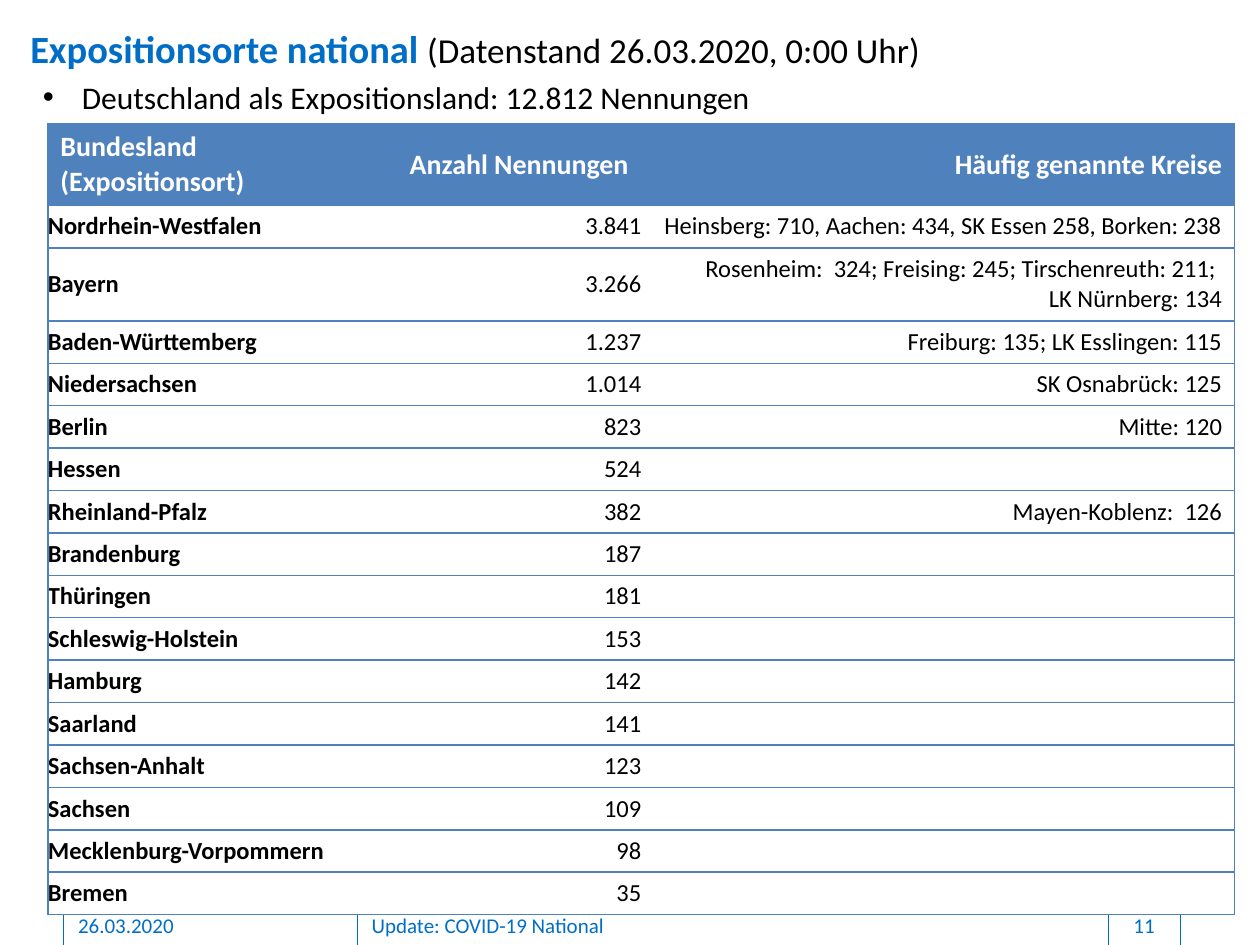
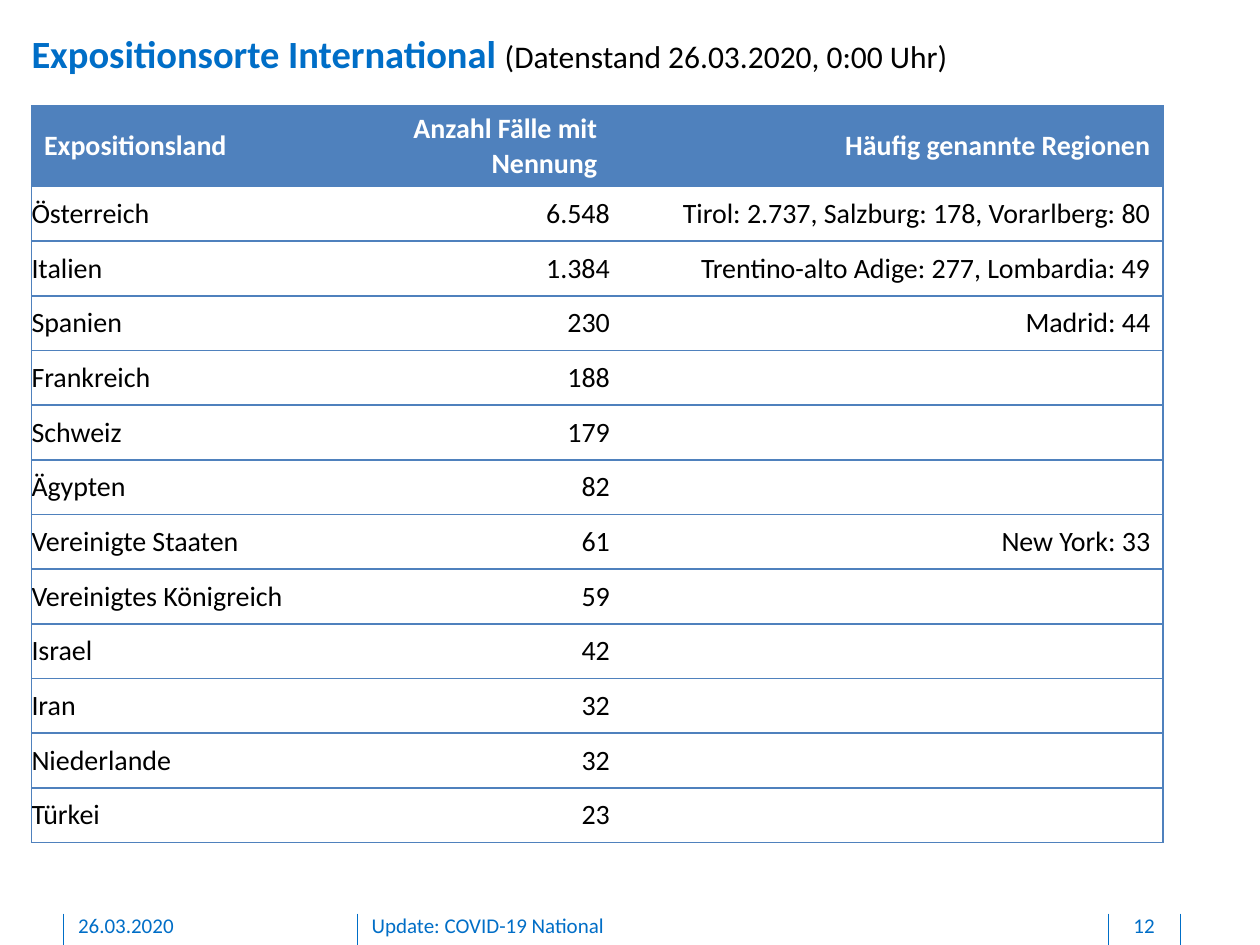
import pptx
import pptx.dml.color
import pptx.enum.shapes
import pptx.enum.text
import pptx.oxml.ns
import pptx.util
from lxml import etree

Inches = pptx.util.Inches
Pt = pptx.util.Pt
qn = pptx.oxml.ns.qn
RGBColor = pptx.dml.color.RGBColor
Align = pptx.enum.text.PP_ALIGN
Anchor = pptx.enum.text.MSO_ANCHOR
AutoSize = pptx.enum.text.MSO_AUTO_SIZE

FONT = "Calibri"
BLUE = RGBColor(0x00, 0x6E, 0xC7)
TABLE_BLUE = RGBColor(0x4F, 0x81, 0xBD)
BLACK = RGBColor(0, 0, 0)
WHITE = RGBColor(0xFF, 0xFF, 0xFF)

REPORT_DATE = "26.03.2020"
DATA_STATUS = "(Datenstand 26.03.2020, 0:00 Uhr)"
FOOTER_RULES = (0.5, 2.84, 8.8, 9.37)

STATES = [
    ("Bundesland (Expositionsort)", "Anzahl Nennungen", "Häufig genannte Kreise"),
    ("Nordrhein-Westfalen", "3.841",
     "Heinsberg: 710, Aachen: 434, SK Essen 258, Borken: 238"),
    ("Bayern", "3.266",
     "Rosenheim:  324; Freising: 245; Tirschenreuth: 211; \nLK Nürnberg: 134"),
    ("Baden-Württemberg", "1.237", "Freiburg: 135; LK Esslingen: 115"),
    ("Niedersachsen", "1.014", "SK Osnabrück: 125"),
    ("Berlin", "823", "Mitte: 120"),
    ("Hessen", "524", ""),
    ("Rheinland-Pfalz", "382", "Mayen-Koblenz:  126"),
    ("Brandenburg", "187", ""),
    ("Thüringen", "181", ""),
    ("Schleswig-Holstein", "153", ""),
    ("Hamburg", "142", ""),
    ("Saarland", "141", ""),
    ("Sachsen-Anhalt", "123", ""),
    ("Sachsen", "109", ""),
    ("Mecklenburg-Vorpommern", "98", ""),
    ("Bremen", "35", ""),
]

COUNTRIES = [
    ("Expositionsland", "Anzahl Fälle mit Nennung", "Häufig genannte Regionen"),
    ("Österreich", "6.548", "Tirol: 2.737, Salzburg: 178, Vorarlberg: 80"),
    ("Italien", "1.384", "Trentino-alto Adige: 277, Lombardia: 49"),
    ("Spanien", "230", "Madrid: 44"),
    ("Frankreich", "188", ""),
    ("Schweiz", "179", ""),
    ("Ägypten", "82", ""),
    ("Vereinigte Staaten", "61", "New York: 33"),
    ("Vereinigtes Königreich", "59", ""),
    ("Israel", "42", ""),
    ("Iran", "32", ""),
    ("Niederlande", "32", ""),
    ("Türkei", "23", ""),
]


def add_span(para, text, size=12, color=BLACK, bold=False, align=Align.LEFT):
    para.alignment = align
    span = para.add_run()
    span.text = text
    span.font.name = FONT
    span.font.size = Pt(size)
    span.font.bold = bold
    span.font.color.rgb = color


def place(box, left, top, width, height):
    box.left, box.top = Inches(left), Inches(top)
    box.width, box.height = Inches(width), Inches(height)


def set_margins(target, left, top, right, bottom):
    target.margin_left, target.margin_top = Inches(left), Inches(top)
    target.margin_right, target.margin_bottom = Inches(right), Inches(bottom)


def set_title(page, heading, left, top, status_size):
    title = page.shapes.title
    place(title, left, top, 8.85, 0.37)
    frame = title.text_frame
    frame.auto_size = AutoSize.SHAPE_TO_FIT_TEXT
    frame.vertical_anchor = Anchor.MIDDLE
    set_margins(frame, 0, 0, 0, 0)
    para = frame.paragraphs[0]
    add_span(para, heading + " ", size=22, color=BLUE, bold=True)
    add_span(para, DATA_STATUS, size=status_size)


def set_bullet(page, text):
    body = page.placeholders[1]
    place(body, 0.24, 0.57, 5.89, 0.4)
    frame = body.text_frame
    frame.word_wrap = False
    frame.auto_size = AutoSize.SHAPE_TO_FIT_TEXT
    para = frame.paragraphs[0]
    para.space_before = Pt(0)
    properties = para._p.get_or_add_pPr()
    properties.set("marL", str(Inches(0.31)))
    properties.set("indent", str(Inches(-0.31)))
    etree.SubElement(properties, qn("a:buFont"), typeface="Arial")
    etree.SubElement(properties, qn("a:buChar"), char="•")
    add_span(para, text, size=18)


def add_footer_text(page, text, left, width, align=Align.LEFT):
    box = page.shapes.add_textbox(Inches(left), Inches(7.24), Inches(width), Inches(0.21))
    frame = box.text_frame
    frame.word_wrap = True
    set_margins(frame, 0, 0, 0, 0.05)
    add_span(frame.paragraphs[0], text, color=BLUE, align=align)


def add_footer(page, number):
    for x in FOOTER_RULES:
        rule = page.shapes.add_connector(
            pptx.enum.shapes.MSO_CONNECTOR.STRAIGHT,
            Inches(x), Inches(7.25), Inches(x), Inches(7.5))
        rule.line.color.rgb = BLUE
        rule.line.width = Pt(0.5)
        etree.SubElement(rule._element.spPr, qn("a:effectLst"))
    add_footer_text(page, REPORT_DATE, 0.62, 2.03)
    add_footer_text(page, "Update: COVID-19 National", 2.95, 5.67)
    add_footer_text(page, str(number), 8.81, 0.54, align=Align.CENTER)


def set_borders(cell, visible):
    """Draw the sides named in visible (of L, R, T, B) and hide the others."""
    properties = cell._tc.get_or_add_tcPr()
    for side in "LRTB":
        line = etree.SubElement(properties, qn("a:ln" + side), w=str(Pt(1)))
        if side in visible:
            fill = etree.SubElement(line, qn("a:solidFill"))
            etree.SubElement(fill, qn("a:srgbClr"), val=str(TABLE_BLUE))
        else:
            etree.SubElement(line, qn("a:noFill"))


def fill_cell(cell, text, is_header, column, size, bold):
    set_borders(cell, ("LTB", "TB", "TBR")[column])
    cell.fill.solid()
    cell.fill.fore_color.rgb = TABLE_BLUE if is_header else WHITE
    cell.vertical_anchor = Anchor.MIDDLE
    if not is_header and (column < 2 or not text):
        set_margins(cell, 0, 0, 0, 0)
    if not text:
        return
    frame = cell.text_frame
    for index, line in enumerate(text.split("\n")):
        para = frame.add_paragraph() if index else frame.paragraphs[0]
        add_span(para, line, size=16 if is_header else size,
                 color=WHITE if is_header else BLACK, bold=is_header or bold,
                 align=Align.RIGHT if column else Align.LEFT)


def add_exposure_table(page, rows, left, top, widths, height, size,
                       bold_names=False, fixed_heights=None):
    """Rows without a fixed height share the rest of the table equally."""
    fixed_heights = fixed_heights or {}
    shared = (height - sum(fixed_heights.values())) / (len(rows) - len(fixed_heights))
    table = page.shapes.add_table(
        len(rows), len(widths), Inches(left), Inches(top),
        Inches(sum(widths)), Inches(height)).table
    table.horz_banding = False
    for column, width in enumerate(widths):
        table.columns[column].width = Inches(width)
    for row, texts in enumerate(rows):
        table.rows[row].height = Inches(fixed_heights.get(row, shared))
        for column, text in enumerate(texts):
            fill_cell(table.cell(row, column), text, row == 0, column, size,
                      bold_names and column == 0)


def main():
    deck = pptx.Presentation()
    deck.slide_width, deck.slide_height = Inches(10), Inches(7.5)

    national = deck.slides.add_slide(deck.slide_layouts[1])
    set_title(national, "Expositionsorte national", 0.24, 0.2, status_size=20)
    set_bullet(national, "Deutschland als Expositionsland: 12.812 Nennungen")
    add_footer(national, 11)
    add_exposure_table(national, STATES, 0.38, 0.98, (2.7, 2.01, 4.71), 6.28, size=14,
                       bold_names=True, fixed_heights={0: 0.65, 2: 0.58})

    international = deck.slides.add_slide(deck.slide_layouts[5])
    set_title(international, "Expositionsorte International", 0.25, 0.24, status_size=18)
    add_footer(international, 12)
    add_exposure_table(international, COUNTRIES, 0.25, 0.84, (2.49, 2.1, 4.39), 5.85,
                       size=16, fixed_heights={0: 0.64})

    deck.save("out.pptx")


if __name__ == "__main__":
    main()
